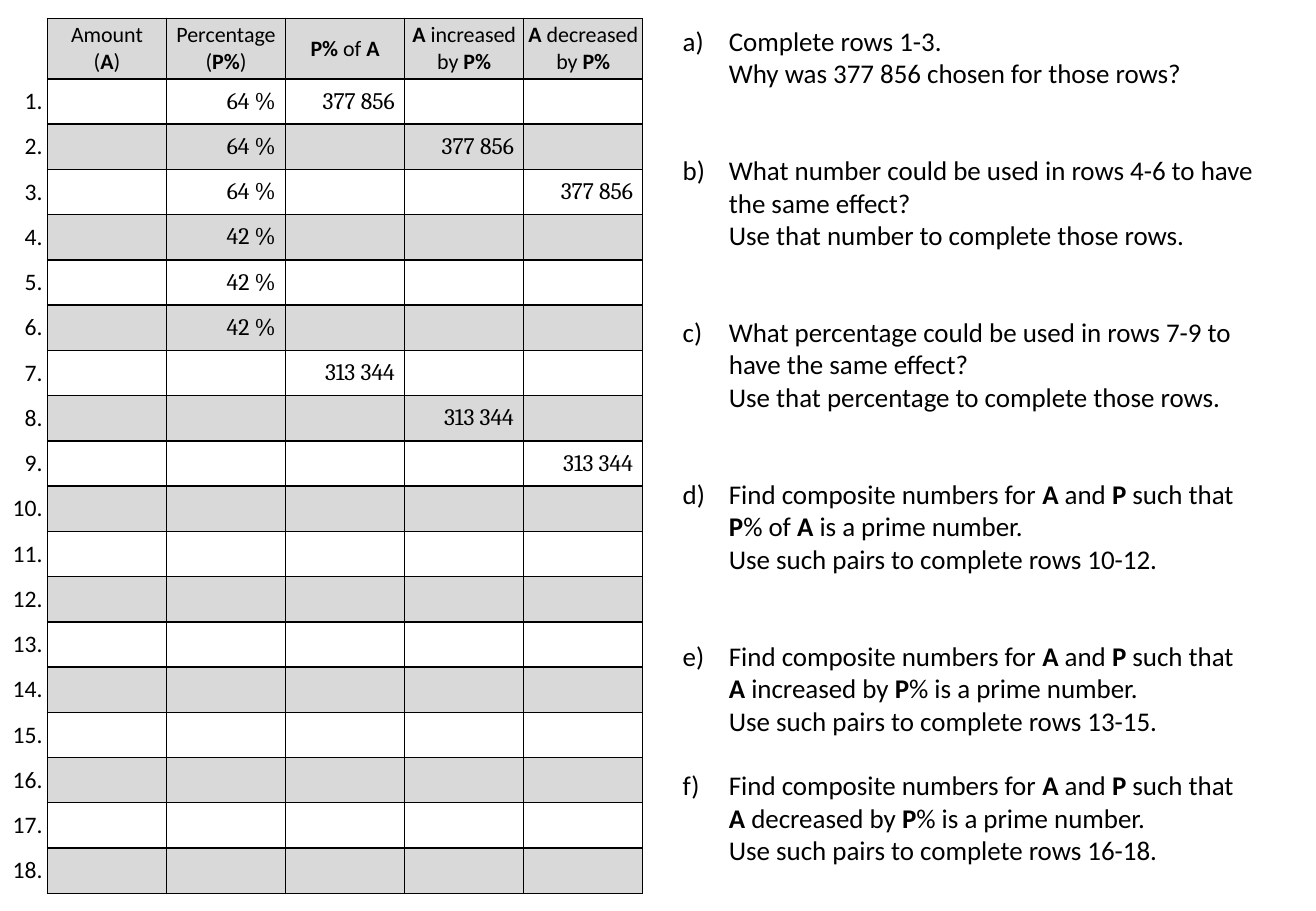
from lxml import etree
from pptx import Presentation
from pptx import util as u
from pptx.dml.color import RGBColor
from pptx.enum import text
from pptx.oxml import ns

BLACK = RGBColor(0x00, 0x00, 0x00)
WHITE = RGBColor(0xFF, 0xFF, 0xFF)
GREY = RGBColor(0xD9, 0xD9, 0xD9)
PLAIN_TABLE = "{2D5ABB26-0587-4C30-8999-92F81FD0307C}"

HEADERS = ["Amount\n(*A*)", "Percentage\n(*P%*)", "*P%* of *A*",
           "*A* increased by *P%*", "*A* decreased by *P%*"]
VALUES = {
    (1, 2): "64 %", (2, 2): "64 %", (3, 2): "64 %",
    (4, 2): "42 %", (5, 2): "42 %", (6, 2): "42 %",
    (1, 3): "377 856", (2, 4): "377 856", (3, 5): "377 856",
    (7, 3): "313 344", (8, 4): "313 344", (9, 5): "313 344",
}
QUESTIONS = [
    (0, "Complete rows 1-3.\nWhy was 377 856 chosen for those rows?"),
    (2, "What number could be used in rows 4-6 to have the same effect?\n"
        "Use that number to complete those rows."),
    (2, "What percentage could be used in rows 7-9 to have the same effect?\n"
        "Use that percentage to complete those rows."),
    (2, "Find composite numbers for *A* and *P* such that\n"
        "*P*% of *A* is a prime number.\nUse such pairs to complete rows 10-12."),
    (2, "Find composite numbers for *A* and *P* such that\n"
        "*A* increased by *P*% is a prime number.\nUse such pairs to complete rows 13-15."),
    (1, "Find composite numbers for *A* and *P* such that\n"
        "*A* decreased by *P*% is a prime number.\nUse such pairs to complete rows 16-18."),
]

ROWS = 18
NUMBER_W, COLUMN_W = 0.31, 0.98
HEADER_H, TABLE_H = 0.5, 7.21
ROW_H = (TABLE_H - HEADER_H) / ROWS
QUESTION_SIZE = 16
INDENT = u.Inches(0.38)


def write(p, marked, size, font="Calibri"):
    for i, part in enumerate(marked.split("*")):
        for j, line in enumerate(part.split("\n")):
            if j:
                p.add_line_break()
            if line:
                r = p.add_run()
                r.text = line
                r.font.size = u.Pt(size)
                r.font.name = font
                r.font.bold = i % 2 == 1
                r.font.color.rgb = BLACK


def add_borders(cell):
    tc_pr = cell._tc.get_or_add_tcPr()
    for side in ("a:lnL", "a:lnR", "a:lnT", "a:lnB"):
        ln = etree.SubElement(tc_pr, ns.qn(side), w=str(u.Pt(1)))
        fill = etree.SubElement(ln, ns.qn("a:solidFill"))
        etree.SubElement(fill, ns.qn("a:srgbClr"), val=str(BLACK))


def fill_cell(cell, row, col):
    cell.margin_left = cell.margin_top = cell.margin_bottom = 0
    cell.margin_right = 0
    cell.vertical_anchor = text.MSO_ANCHOR.MIDDLE
    if col:
        add_borders(cell)
        cell.fill.solid()
        cell.fill.fore_color.rgb = WHITE if row % 2 else GREY
    else:
        cell.fill.background()

    p = cell.text_frame.paragraphs[0]
    if row == 0 and col:
        p.alignment = text.PP_ALIGN.CENTER
        write(p, HEADERS[col - 1], 13)
    elif row and col == 0:
        p.alignment = text.PP_ALIGN.RIGHT
        cell.margin_right = u.Inches(0.04)
        write(p, f"{row}.", 14)
    elif (row, col) in VALUES:
        p.alignment = text.PP_ALIGN.RIGHT
        cell.margin_right = u.Inches(0.08)
        write(p, VALUES[row, col], 14, "Cambria")


def add_percentage_table(s):
    cols = len(HEADERS) + 1
    frame = s.shapes.add_table(
        ROWS + 1, cols, u.Inches(0.08), u.Inches(0.15),
        u.Inches(NUMBER_W + COLUMN_W * len(HEADERS)), u.Inches(TABLE_H))
    table = frame.table
    table.first_row = table.horz_banding = False
    frame._element.find(".//" + ns.qn("a:tableStyleId")).text = PLAIN_TABLE
    for col in range(cols):
        table.columns[col].width = u.Inches(COLUMN_W if col else NUMBER_W)
    for row in range(ROWS + 1):
        table.rows[row].height = u.Inches(ROW_H if row else HEADER_H)
        for col in range(cols):
            fill_cell(table.cell(row, col), row, col)


def add_questions(s):
    sp = s.shapes.add_textbox(u.Inches(5.52), u.Inches(0.15),
                              u.Inches(5.12), u.Inches(7.1))
    tf = sp.text_frame
    tf.word_wrap = True
    for i, (gap_lines, question) in enumerate(QUESTIONS):
        p = tf.add_paragraph() if i else tf.paragraphs[0]
        p.space_before = u.Pt(gap_lines * QUESTION_SIZE * 1.2)
        write(p, question, QUESTION_SIZE)
        p_pr = p._p.get_or_add_pPr()
        p_pr.set("marL", str(INDENT))
        p_pr.set("indent", str(-INDENT))
        etree.SubElement(p_pr, ns.qn("a:buFont"), typeface="+mj-lt")
        etree.SubElement(p_pr, ns.qn("a:buAutoNum"), type="alphaLcParenR")


def main():
    prs = Presentation()
    prs.slide_width, prs.slide_height = u.Inches(10.83), u.Inches(7.5)
    s = prs.slides.add_slide(prs.slide_layouts[6])
    add_percentage_table(s)
    add_questions(s)
    prs.save("out.pptx")


if __name__ == "__main__":
    main()
